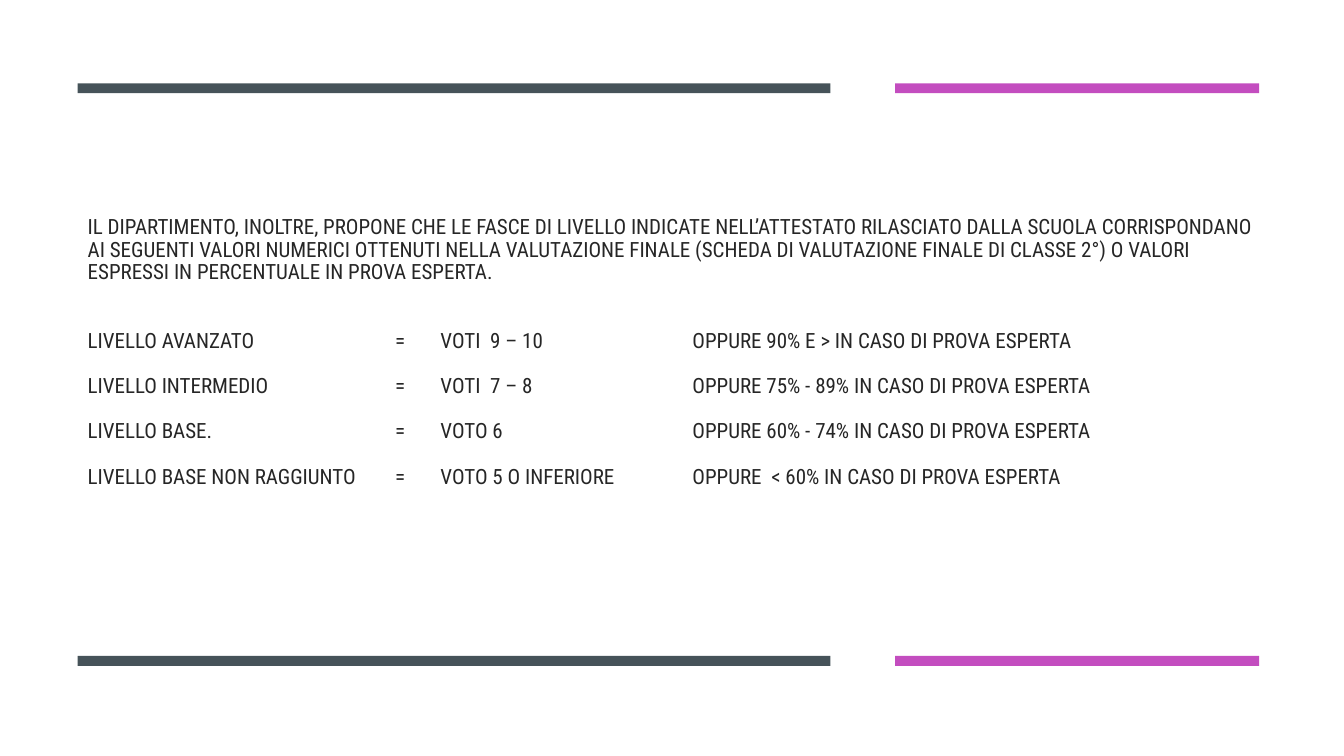
from dataclasses import dataclass

import pptx
import pptx.dml.color
import pptx.enum.shapes
import pptx.enum.text
import pptx.oxml.ns
import pptx.util
from lxml import etree
from pptx.util import Cm, Pt


@dataclass(frozen=True)
class Theme:
    background: str = "FFFFFF"
    text: str = "262626"
    slate: str = "465359"
    magenta: str = "C34DBF"
    font: str = "Roboto Condensed"
    size: int = 15


theme = Theme()
rgb = pptx.dml.color.RGBColor.from_string

prs = pptx.Presentation()
prs.slide_width, prs.slide_height = Cm(33.87), Cm(19.05)
s = prs.slides.add_slide(prs.slide_layouts[5])
s.background.fill.solid()
s.background.fill.fore_color.rgb = rgb(theme.background)

# Statement and level rows share the title placeholder
intro = (
    "IL DIPARTIMENTO, INOLTRE, PROPONE CHE LE FASCE DI LIVELLO INDICATE "
    "NELL’ATTESTATO RILASCIATO DALLA SCUOLA CORRISPONDANO AI SEGUENTI VALORI "
    "NUMERICI OTTENUTI NELLA VALUTAZIONE FINALE (SCHEDA DI VALUTAZIONE FINALE "
    "DI CLASSE 2°) O VALORI ESPRESSI IN PERCENTUALE IN PROVA ESPERTA."
)
levels = [
    ("LIVELLO AVANZATO", "VOTI  9 – 10", "90% E >"),
    ("LIVELLO INTERMEDIO", "VOTI  7 – 8", "75% - 89%"),
    ("LIVELLO BASE.", "VOTO 6", "60% - 74%"),
    ("LIVELLO BASE NON RAGGIUNTO", "VOTO 5 O INFERIORE", " < 60%"),
]
rows = [
    f"{level}\t=\t{grade}\tOPPURE {share} IN CASO DI PROVA ESPERTA"
    for level, grade, share in levels
]
tab_stops = [Cm(7.75), Cm(8.89), Cm(15.24)]
line_gap = 16.25

title = s.shapes.title
title.left, title.top, title.width, title.height = Cm(1.96), Cm(2.79), Cm(30), Cm(13.34)
tf = title.text_frame
tf.word_wrap = True
tf.auto_size = pptx.enum.text.MSO_AUTO_SIZE.NONE
tf.vertical_anchor = pptx.enum.text.MSO_ANCHOR.MIDDLE
tf.margin_left = tf.margin_right = Cm(0.25)
tf.margin_top, tf.margin_bottom = Cm(0.13), Cm(1.28)

for i, text in enumerate([intro, *rows]):
    p = tf.paragraphs[0] if i == 0 else tf.add_paragraph()
    p.add_run().text = text
    p.alignment = pptx.enum.text.PP_ALIGN.LEFT
    if i > 0:
        tabs = etree.SubElement(p._p.get_or_add_pPr(), pptx.oxml.ns.qn("a:tabLst"))
        for stop in tab_stops:
            etree.SubElement(tabs, pptx.oxml.ns.qn("a:tab"), pos=str(stop), algn="l")
    p.line_spacing = 0.9
    p.space_before = Pt((0, 2 * line_gap)[i] if i < 2 else line_gap)
    p.font.name, p.font.size = theme.font, Pt(theme.size)
    p.font.color.rgb = rgb(theme.text)

# Matching pairs of bars above and below the text
for top in (2.1, 16.53):
    for left, width, colour in ((1.96, 18.97, theme.slate), (22.56, 9.17, theme.magenta)):
        bar = s.shapes.add_shape(
            pptx.enum.shapes.MSO_SHAPE.RECTANGLE, Cm(left), Cm(top), Cm(width), Cm(0.25)
        )
        bar.shadow.inherit = False
        bar.fill.solid()
        bar.fill.fore_color.rgb = rgb(colour)
        bar.line.fill.background()

prs.save("out.pptx")
